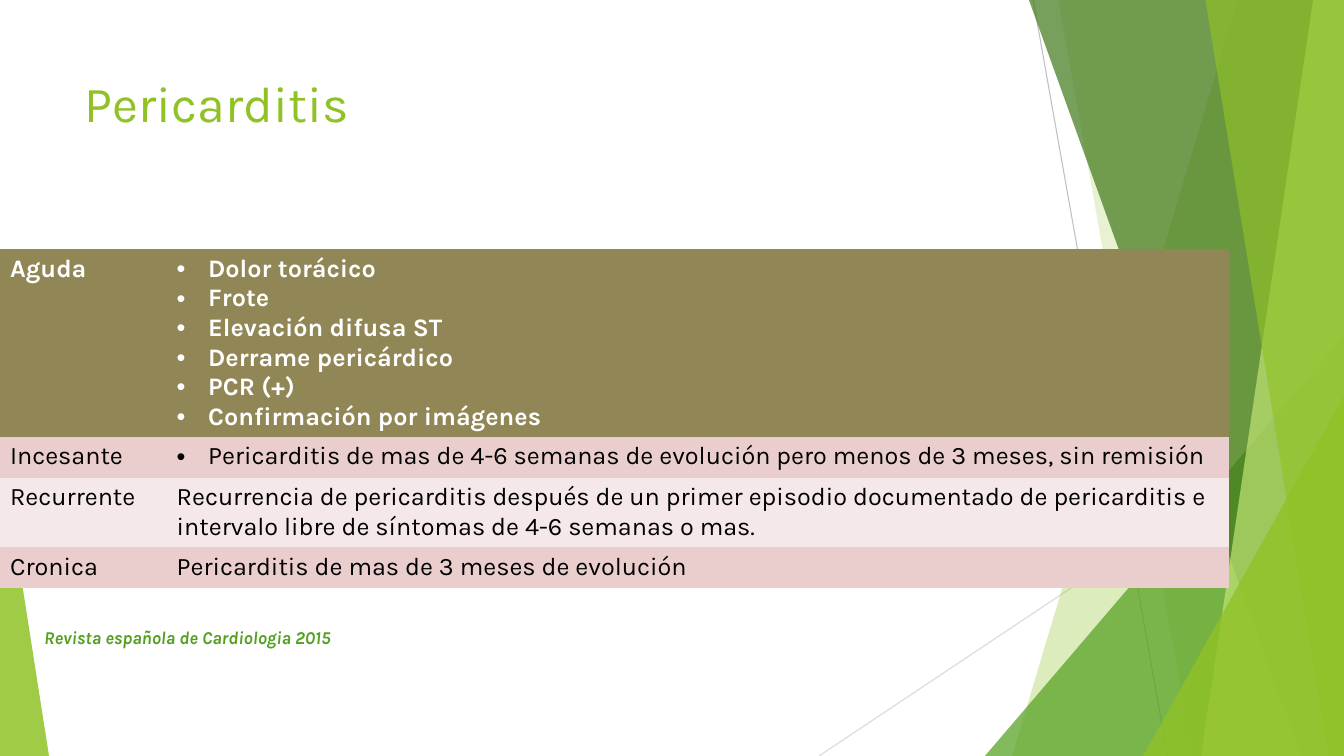
from lxml.etree import SubElement
from pptx import Presentation
from pptx.dml.color import RGBColor
from pptx.enum.shapes import MSO_CONNECTOR, MSO_SHAPE
from pptx.enum.text import MSO_ANCHOR, PP_ALIGN
from pptx.oxml.ns import qn
from pptx.util import Pt

FONT = "Karla"
WIDTH, HEIGHT = 960, 540
COLORS = {
    "lime": "90C226", "green": "54A021", "forest": "3F7819", "pale": "C0E474",
    "line": "BFBFBF", "faint": "D9D9D9", "olive": "918655", "rose": "EACDCD",
    "blush": "F5E8E8", "white": "FFFFFF", "black": "000000",
}
PLAIN_TABLE = "{2D5ABB26-0587-4C30-8999-92F81FD0307C}"
SYMPTOMS = ["Dolor torácico", "Frote", "Elevación difusa ST", "Derrame pericárdico",
            "PCR (+)", "Confirmación por imágenes"]
UNREMITTING = ["Pericarditis de mas de 4-6 semanas de evolución pero menos de 3 meses, sin remisión"]
RELAPSE = ["Recurrencia de pericarditis después de un primer episodio documentado de "
           "pericarditis e intervalo libre de síntomas de 4-6 semanas o mas."]
CHRONIC = ["Pericarditis de mas de 3 meses de evolución"]
STAGES = [
    ("Aguda", SYMPTOMS, True, 133.5, "olive"),
    ("Incesante", UNREMITTING, True, 29.25, "rose"),
    ("Recurrente", RELAPSE, False, 49.5, "blush"),
    ("Cronica", CHRONIC, False, 29.25, "rose"),
]


def rgb(name):
    """Return the named colour."""
    return RGBColor.from_string(COLORS[name])


def style_font(font, size, color, bold=False, italic=False):
    """Apply the slide typeface with the given look."""
    font.name, font.size = FONT, Pt(size)
    font.bold, font.italic = bold, italic
    font.color.rgb = rgb(color)


def paint(facet, color, opacity):
    """Give a facet a translucent fill with no outline or shadow."""
    facet.shadow.inherit = False
    facet.line.fill.background()
    facet.fill.solid()
    facet.fill.fore_color.rgb = rgb(color)
    tint = facet.fill._xPr.find(qn("a:solidFill"))[0]
    SubElement(tint, qn("a:alpha")).set("val", str(opacity * 1000))


def add_ray(slide, start, end, color):
    """Draw a thin background line between two points."""
    ray = slide.shapes.add_connector(MSO_CONNECTOR.STRAIGHT, *map(Pt, start + end))
    ray.line.color.rgb = rgb(color)
    ray.line.width = Pt(0.75)
    SubElement(ray._element.spPr, qn("a:effectLst"))


def add_band(slide, top_x, bottom_x, color, opacity):
    """Draw a full-height facet from a slanted left edge to the slide's right edge."""
    outline = slide.shapes.build_freeform(Pt(top_x), 0)
    corners = [(WIDTH, 0), (WIDTH, HEIGHT), (bottom_x, HEIGHT)]
    outline.add_line_segments([(Pt(x), Pt(y)) for x, y in corners], close=True)
    paint(outline.convert_to_shape(), color, opacity)


def add_corner(slide, left, top, width, apex, color, opacity):
    """Draw a right triangle standing on the slide's bottom edge."""
    corner = slide.shapes.add_shape(
        MSO_SHAPE.ISOSCELES_TRIANGLE, Pt(left), Pt(top), Pt(width), Pt(HEIGHT - top))
    corner.adjustments[0] = apex
    paint(corner, color, opacity)


def add_backdrop(slide):
    """Layer the green facets from back to front."""
    add_ray(slide, (738, 0), (834, HEIGHT), "line")
    add_ray(slide, (WIDTH, 290), (585, HEIGHT), "faint")
    add_band(slide, 884, 723, "lime", 30)
    add_band(slide, 756, 852, "lime", 20)
    add_corner(slide, 703.5, 240, 256.5, 1, "green", 72)
    add_band(slide, 735, 929.5, "forest", 70)
    add_band(slide, 938, 858, "pale", 70)
    add_band(slide, 861, 949, "lime", 65)
    add_corner(slide, 816.5, 283, 143.5, 1, "lime", 80)
    add_corner(slide, 0, 316, 35, 0, "lime", 85)


def add_title(slide, left, top, width, height):
    """Place and format the slide title."""
    title = slide.shapes.title
    title.left, title.top, title.width, title.height = map(Pt, (left, top, width, height))
    title.text_frame.text = "Pericarditis"
    title.text_frame.vertical_anchor = MSO_ANCHOR.TOP
    heading = title.text_frame.paragraphs[0]
    heading.alignment = PP_ALIGN.LEFT
    style_font(heading.font, 36, "lime")


def add_bullet(paragraph):
    """Give a paragraph a hanging round bullet."""
    properties = paragraph._p.get_or_add_pPr()
    properties.set("marL", str(Pt(22.5)))
    properties.set("indent", str(-Pt(22.5)))
    SubElement(properties, qn("a:buFont")).set("typeface", "Arial")
    SubElement(properties, qn("a:buChar")).set("char", "•")


def fill_cell(cell, lines, bulleted, fill, header):
    """Write lines into a table cell and colour it."""
    cell.fill.solid()
    cell.fill.fore_color.rgb = rgb(fill)
    cell.text_frame.text = "\n".join(lines)
    for paragraph in cell.text_frame.paragraphs:
        if bulleted:
            add_bullet(paragraph)
        style_font(paragraph.font, 18, "white" if header else "black", bold=header)


def add_stages(slide, left, top, width):
    """Build the table of pericarditis types."""
    total = sum(stage[3] for stage in STAGES)
    table = slide.shapes.add_table(
        len(STAGES), 2, Pt(left), Pt(top), Pt(width), Pt(total)).table
    table._tbl.tblPr.find(qn("a:tableStyleId")).text = PLAIN_TABLE
    name_width = 119
    table.columns[0].width = Pt(name_width)
    table.columns[1].width = Pt(width - name_width)
    for index, (name, criteria, bulleted, height, fill) in enumerate(STAGES):
        table.rows[index].height = Pt(height)
        fill_cell(table.cell(index, 0), [name], False, fill, index == 0)
        fill_cell(table.cell(index, 1), criteria, bulleted, fill, index == 0)


def add_citation(slide, left, top, width, height):
    """Add the source line under the table."""
    frame = slide.shapes.add_textbox(*map(Pt, (left, top, width, height))).text_frame
    frame.word_wrap = True
    frame.text = "Revista española de Cardiologia 2015"
    citation = frame.paragraphs[0]
    citation.line_spacing = 0.9
    style_font(citation.font, 12.9, "green", bold=True, italic=True)


def main():
    """Build the slide and save it."""
    presentation = Presentation()
    presentation.slide_width, presentation.slide_height = Pt(WIDTH), Pt(HEIGHT)
    slide = presentation.slides.add_slide(presentation.slide_layouts[5])
    add_backdrop(slide)
    add_title(slide, 53.5, 48, 677, 104)
    add_stages(slide, 0, 178, 878)
    add_citation(slide, 24.5, 445.5, 256.5, 29.5)
    presentation.save("out.pptx")


if __name__ == "__main__":
    main()
